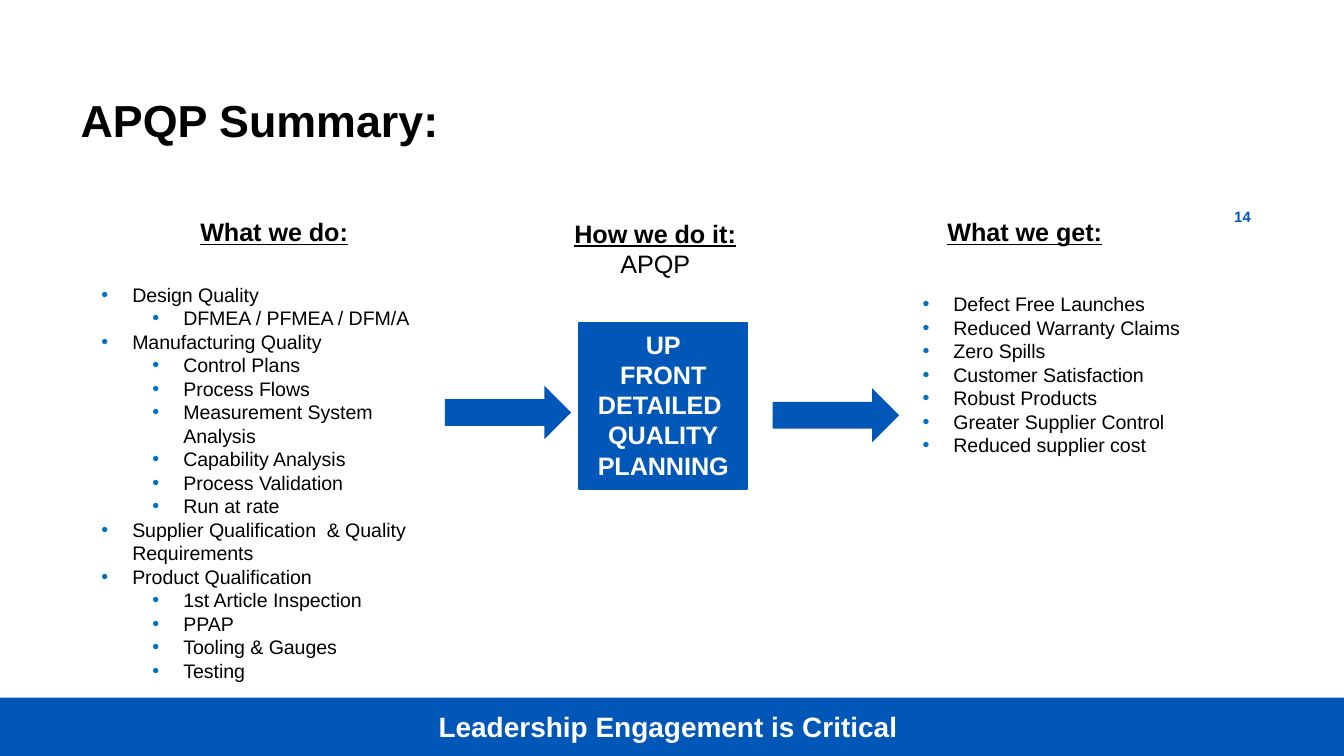
"""Builds the APQP summary slide: what we do, how we do it, what we get."""
from lxml.etree import SubElement
from pptx import Presentation
from pptx.dml.color import RGBColor
from pptx.enum.shapes import MSO_SHAPE as Shape
from pptx.enum.text import MSO_ANCHOR as Anchor, PP_ALIGN as Align
from pptx.oxml.ns import qn
from pptx.util import Inches, Pt

WIDTH = 10
HEIGHT = WIDTH * 9 / 16
BLUE, BULLET, BLACK, WHITE = "0057B8", "0070C0", "000000", "FFFFFF"
HANG, LEVEL_STEP = 0.23, 0.38
ARROW_SIZE = (0.94, 0.4)
BANNER_TOP = 5.19

TITLE = "APQP Summary:"
PAGE_NUMBER = "14"
BANNER = "Leadership Engagement is Critical "
CORE = ["UP", "FRONT", "DETAILED ", "QUALITY", "PLANNING"]
ACTIVITIES = [
    ("Design Quality", ["DFMEA / PFMEA / DFM/A"]),
    ("Manufacturing Quality", [
        "Control Plans", "Process Flows", "Measurement System Analysis",
        "Capability Analysis", "Process Validation", "Run at rate"]),
    ("Supplier Qualification  & Quality Requirements", []),
    ("Product Qualification", [
        "1st Article Inspection", "PPAP", "Tooling & Gauges", "Testing"]),
]
BENEFITS = [(text, []) for text in (
    "Defect Free Launches", "Reduced Warranty Claims", "Zero Spills",
    "Customer Satisfaction", "Robust Products", "Greater Supplier Control",
    "Reduced supplier cost")]
HEADINGS = [
    ("What we do:", "", (1.38, 1.55, 2.15, 0.25), Align.LEFT),
    ("How we do it: ", "APQP", (4, 1.54, 1.75, 0.69), Align.CENTER),
    ("What we get:", "", (6.75, 1.55, 1.75, 0.25), Align.CENTER),
]
LISTS = [(ACTIVITIES, (0.52, 1.92, 2.79, 3.26)), (BENEFITS, (6.69, 2.05, 2.56, 1.56))]
ARROWS = [(3.31, 2.87), (5.75, 2.89)]


def color(value):
    return RGBColor.from_string(value)


def style(span, size, value=BLACK, bold=False, underline=False):
    font = span.font
    font.name, font.size = "Arial", Pt(size)
    font.bold, font.underline = bold, underline
    font.color.rgb = color(value)


def place(box, area):
    box.left, box.top, box.width, box.height = map(Inches, area)


def add_box(page, kind, area, fill=None, anchor=Anchor.TOP):
    box = page.shapes.add_shape(kind, *map(Inches, area))
    box.shadow.inherit = False
    box.line.fill.background()
    if fill:
        box.fill.solid()
        box.fill.fore_color.rgb = color(fill)
    else:
        box.fill.background()
    box.text_frame.word_wrap = True
    box.text_frame.vertical_anchor = anchor
    return box


def write(box, lines, size, value, align=Align.CENTER):
    box.text_frame.text = "\n".join(lines)
    for para in box.text_frame.paragraphs:
        para.alignment = align
        for span in para.runs:
            style(span, size, value, bold=True)


def add_bullet(para, level):
    para.level = level
    para.alignment = Align.LEFT
    props = para._p.get_or_add_pPr()
    props.set("marL", str(Inches(HANG + level * LEVEL_STEP)))
    props.set("indent", str(-Inches(HANG)))
    tint = SubElement(props, qn("a:buClr"))
    SubElement(tint, qn("a:srgbClr"), val=BULLET)
    SubElement(props, qn("a:buFont"), typeface="Arial")
    SubElement(props, qn("a:buChar"), char="•")


def add_list(page, groups, area):
    frame = add_box(page, Shape.ROUNDED_RECTANGLE, area).text_frame
    items = [(text, level) for head, subs in groups
             for text, level in [(head, 0)] + [(sub, 1) for sub in subs]]
    frame.text = "\n".join(text for text, _ in items)
    for para, (_, level) in zip(frame.paragraphs, items):
        add_bullet(para, level)
        style(para.runs[0], 10.5)


def add_heading(page, label, detail, area, align):
    box = add_box(page, Shape.ROUNDED_RECTANGLE, area)
    write(box, [label], 13.5, BLACK, align)
    para = box.text_frame.paragraphs[0]
    para.runs[0].font.underline = True
    if detail:
        span = para.add_run()
        span.text = detail
        style(span, 13.5)


def main():
    deck = Presentation()
    deck.slide_width, deck.slide_height = Inches(WIDTH), Inches(HEIGHT)
    page = deck.slides.add_slide(deck.slide_layouts[5])

    title = page.shapes.title
    place(title, (0.5, 0.5, 8.35, 0.78))
    title.text_frame.vertical_anchor = Anchor.MIDDLE
    write(title, [TITLE], 24, BLACK, Align.LEFT)

    for groups, area in LISTS:
        add_list(page, groups, area)
    for heading in HEADINGS:
        add_heading(page, *heading)

    banner = add_box(page, Shape.RECTANGLE, (0, BANNER_TOP, WIDTH, HEIGHT - BANNER_TOP),
                     BLUE, Anchor.MIDDLE)
    write(banner, [BANNER], 15, WHITE)

    core = add_box(page, Shape.RECTANGLE, (4.31, 2.4, 1.25, 1.24), BLUE)
    core.line.color.rgb = color(BLUE)
    core.line.width = Pt(1)
    write(core, CORE, 13.5, WHITE)

    for corner in ARROWS:
        add_box(page, Shape.RIGHT_ARROW, corner + ARROW_SIZE, BLUE)

    number = page.shapes.add_textbox(*map(Inches, (8.99, 1.55, 0.51, 0.13)))
    number.text_frame.word_wrap = True
    number.text_frame.vertical_anchor = Anchor.MIDDLE
    write(number, [PAGE_NUMBER], 8, BLUE)

    deck.save("out.pptx")


if __name__ == "__main__":
    main()
